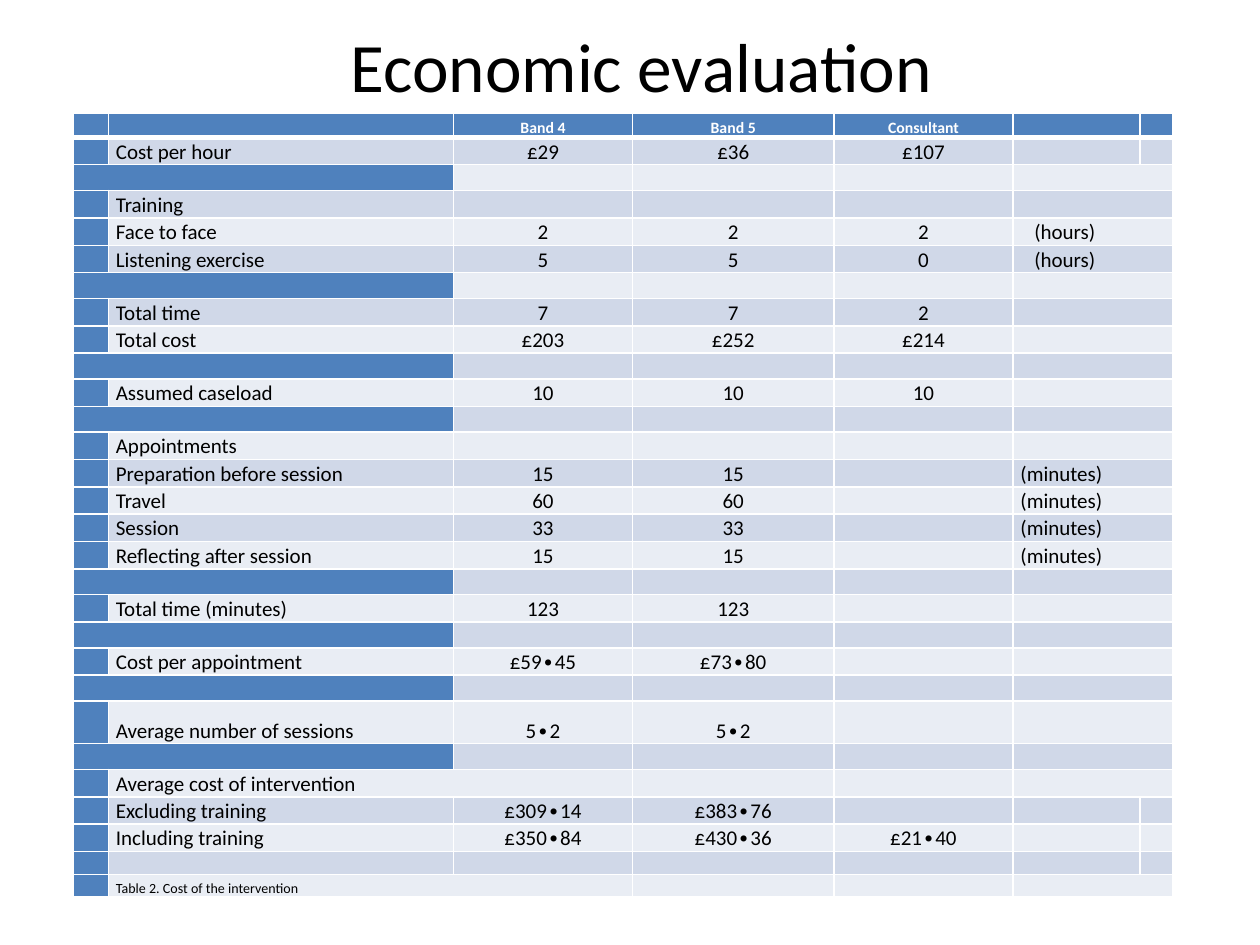
from lxml.etree import SubElement
from pptx import Presentation
from pptx.dml.color import RGBColor
from pptx.enum.text import MSO_ANCHOR, PP_ALIGN
from pptx.oxml import parse_xml
from pptx.oxml.ns import nsdecls, qn
from pptx.util import Inches, Pt

COLORS = {
    "header": "4F81BD",
    "odd": "D0D8E8",
    "even": "E9EDF4",
    "text": "000000",
    "light": "FFFFFF",
}
FONT = "Calibri"
COLUMN_WIDTHS = [0.28, 2.74, 1.42, 1.6, 1.42, 1.01, 0.26]
ROW_HEIGHT = 0.19
SPECIAL_HEIGHTS = {12: 0.21, 22: 0.34, 25: 0.2, 27: 0.18, 28: 0.18}
TEXT_SIZES = {0: 9, 27: 8, 28: 8}
UNMERGED_ROWS = {0, 1, 25, 26, 27}
WIDE_LABEL_ROWS = {24, 28}
HOURS_INDENT = 0.11
SPACER = ("",)

COST_ROWS = [
    ("", "Band 4", "Band 5", "Consultant"),
    ("Cost per hour", "£29", "£36", "£107"),
    SPACER,
    ("Training",),
    ("Face to face", "2", "2", "2", "(hours)"),
    ("Listening exercise", "5", "5", "0", "(hours)"),
    SPACER,
    ("Total time", "7", "7", "2"),
    ("Total cost", "£203", "£252", "£214"),
    SPACER,
    ("Assumed caseload", "10", "10", "10"),
    SPACER,
    ("Appointments",),
    ("Preparation before session", "15", "15", "", "(minutes)"),
    ("Travel", "60", "60", "", "(minutes)"),
    ("Session", "33", "33", "", "(minutes)"),
    ("Reflecting after session", "15", "15", "", "(minutes)"),
    SPACER,
    ("Total time (minutes)", "123", "123"),
    SPACER,
    ("Cost per appointment", "£59∙45", "£73∙80"),
    SPACER,
    ("Average number of sessions", "5∙2", "5∙2"),
    SPACER,
    ("Average cost of intervention",),
    ("Excluding training", "£309∙14", "£383∙76"),
    ("Including training", "£350∙84", "£430∙36", "£21∙40"),
    SPACER,
    ("Table 2. Cost of the intervention",),
]


def write_text(frame, text, *, size, color="text", bold=False,
               align=PP_ALIGN.LEFT, spacing=None):
    paragraph = frame.paragraphs[0]
    paragraph.alignment = align
    if not text:
        SubElement(paragraph._p, qn("a:endParaRPr"), sz=str(int(size * 100)))
        return
    paragraph.line_spacing = spacing
    run = paragraph.add_run()
    run.text = text
    run.font.name = FONT
    run.font.size = Pt(size)
    run.font.bold = bold
    run.font.color.rgb = RGBColor.from_string(COLORS[color])


def set_borders(cell, bottom_width):
    properties = cell._tc.get_or_add_tcPr()
    widths = {"lnL": 1, "lnR": 1, "lnT": 1, "lnB": bottom_width}
    for position, (side, width) in enumerate(widths.items()):
        properties.insert(position, parse_xml(
            f'<a:{side} {nsdecls("a")} w="{Pt(width)}"><a:solidFill>'
            f'<a:srgbClr val="{COLORS["light"]}"/></a:solidFill></a:{side}>'))


def format_cell(cell, text, row, column):
    is_header = row == 0
    band = "odd" if row % 2 else "even"
    cell.fill.solid()
    cell.fill.fore_color.rgb = RGBColor.from_string(
        COLORS["header" if is_header or column == 0 else band])
    set_borders(cell, 3 if is_header else 1)
    cell.vertical_anchor = MSO_ANCHOR.BOTTOM
    indent = HOURS_INDENT if text == "(hours)" else 0
    cell.margin_left = Inches(0.06 + indent)
    cell.margin_right = Inches(0.06)
    cell.margin_top = cell.margin_bottom = 0
    write_text(cell.text_frame, text, size=TEXT_SIZES.get(row, 12),
               color="light" if is_header else "text", bold=is_header,
               align=PP_ALIGN.CENTER if column in (2, 3, 4) else PP_ALIGN.LEFT,
               spacing=1.07)


def merge_cells(table, row, label):
    if row not in UNMERGED_ROWS:
        table.cell(row, 5).merge(table.cell(row, 6))
        if not label:
            table.cell(row, 0).merge(table.cell(row, 1))
    if row in WIDE_LABEL_ROWS:
        table.cell(row, 1).merge(table.cell(row, 2))


def add_cost_table(slide):
    heights = [SPECIAL_HEIGHTS.get(row, ROW_HEIGHT) for row in range(len(COST_ROWS))]
    table = slide.shapes.add_table(
        len(COST_ROWS), len(COLUMN_WIDTHS), Inches(0.58), Inches(0.9),
        Inches(sum(COLUMN_WIDTHS)), Inches(sum(heights))).table
    table.horz_banding = False
    for column, width in zip(table.columns, COLUMN_WIDTHS):
        column.width = Inches(width)
    for row, entries in enumerate(COST_ROWS):
        table.rows[row].height = Inches(heights[row])
        merge_cells(table, row, entries[0])
        for column in range(len(COLUMN_WIDTHS)):
            text = entries[column - 1] if 0 < column <= len(entries) else ""
            format_cell(table.cell(row, column), text, row, column)


def add_title(slide, text):
    title = slide.shapes.title
    title.left, title.top = Inches(0.59), Inches(0.13)
    title.width, title.height = Inches(9), Inches(0.77)
    title.text_frame.vertical_anchor = MSO_ANCHOR.MIDDLE
    write_text(title.text_frame, text, size=39.6, align=PP_ALIGN.CENTER)


def main():
    presentation = Presentation()
    presentation.slide_width = Inches(10)
    presentation.slide_height = Inches(7.5)
    slide = presentation.slides.add_slide(presentation.slide_layouts[5])
    add_title(slide, "Economic evaluation")
    add_cost_table(slide)
    presentation.save("out.pptx")


if __name__ == "__main__":
    main()
